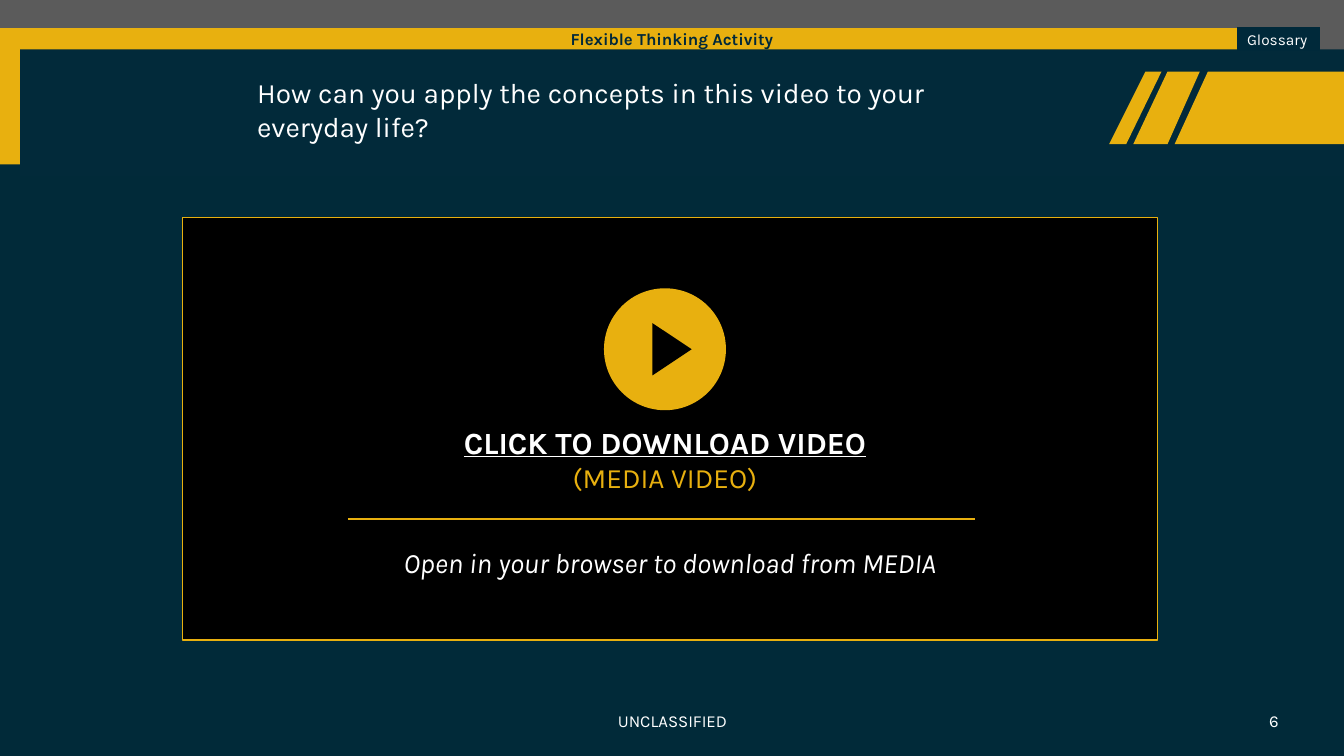
from dataclasses import dataclass

from lxml import etree
from pptx import Presentation
from pptx.dml.color import RGBColor
from pptx.enum.shapes import MSO_CONNECTOR, MSO_SHAPE
from pptx.enum.text import MSO_ANCHOR, PP_ALIGN
from pptx.oxml.ns import qn
from pptx.util import Inches, Pt

RECT, OVAL = MSO_SHAPE.RECTANGLE, MSO_SHAPE.OVAL
BUTTON = MSO_SHAPE.ACTION_BUTTON_CUSTOM
STRAIGHT = MSO_CONNECTOR.STRAIGHT
LEFT, CENTER, RIGHT = PP_ALIGN.LEFT, PP_ALIGN.CENTER, PP_ALIGN.RIGHT
TOP, MIDDLE = MSO_ANCHOR.TOP, MSO_ANCHOR.MIDDLE
W, H = 13.33, 7.5


@dataclass(frozen=True)
class Theme:
    font: str = "Karla"
    ground: str = "012A39"
    panel: str = "022A3A"
    navy: str = "00283A"
    button: str = "00293A"
    gray: str = "5B5B5B"
    gold: str = "E8B00F"
    white: str = "FFFFFF"
    black: str = "000000"
    tiny: int = 11
    small: int = 12
    body: int = 20
    action: int = 22


T = Theme()


def rgb(color):
    return RGBColor.from_string(color)


def paint(sp, fill, line=None):
    sp.shadow.inherit = False
    sp.fill.solid()
    sp.fill.fore_color.rgb = rgb(fill)
    if line:
        sp.line.color.rgb = rgb(line)
        sp.line.width = Pt(1)
    else:
        sp.line.fill.background()
    return sp


def add_box(shapes, kind, box, fill, line=None):
    return paint(shapes.add_shape(kind, *map(Inches, box)), fill, line)


def add_polygon(shapes, points, fill):
    pts = [(Inches(x), Inches(y)) for x, y in points]
    builder = shapes.build_freeform(*pts[0], scale=1.0)
    builder.add_line_segments(pts[1:], close=True)
    return paint(builder.convert_to_shape(), fill)


def set_frame(tf, anchor=TOP):
    tf.word_wrap = True
    tf.vertical_anchor = anchor
    tf.margin_left = tf.margin_right = Inches(0.1)
    tf.margin_top = tf.margin_bottom = Inches(0.05)


def add_run(p, text, size, color, bold=False, italic=False, underline=False):
    r = p.add_run()
    r.text = text
    r.font.name, r.font.size = T.font, Pt(size)
    r.font.color.rgb = rgb(color)
    r.font.bold, r.font.italic, r.font.underline = bold, italic, underline


def add_label(s, box, align, anchor, *lines):
    """Text box with one paragraph per (text, size, color, style) line."""
    tf = s.shapes.add_textbox(*map(Inches, box)).text_frame
    set_frame(tf, anchor)
    for i, (text, size, color, style) in enumerate(lines):
        p = tf.add_paragraph() if i else tf.paragraphs[0]
        p.alignment = align
        add_run(p, text, size, color, **style)


def place(sp, box):
    """Move a placeholder into the box, in front of the shapes so far."""
    sp.left, sp.top, sp.width, sp.height = map(Inches, box)
    sp.element.getparent().append(sp.element)
    return sp.text_frame


def header_bands(s, x, y, w):
    # Gray strip, gold frame and dark panel
    add_box(s.shapes, RECT, (x, y, w, 1.35), T.gray)
    add_box(s.shapes, RECT, (x, y + 0.28, w - 0.25, 1.35), T.gold)
    add_box(s.shapes, RECT, (x + 0.2, y + 0.49, w - 0.2, 1.26), T.panel)

    # Slanted stripes: top left, top right, bottom right, bottom left
    top, bottom = y + 0.71, y + 1.43
    for tl, tr, br, bl in ((11.98, W, W, 11.65),
                           (11.58, 11.9, 11.58, 11.24),
                           (11.36, 11.52, 11.17, 11)):
        add_polygon(s.shapes, [(x + tl, top), (x + tr, top),
                               (x + br, bottom), (x + bl, bottom)], T.gold)

    # Glossary button
    sp = add_box(s.shapes, BUTTON, (x + 12.27, y + 0.27, 0.82, 0.24), T.button)
    tf = sp.text_frame
    set_frame(tf, MIDDLE)
    tf.margin_right = tf.margin_top = tf.margin_bottom = 0
    p = tf.paragraphs[0]
    p.alignment = LEFT
    add_run(p, "Glossary", T.tiny, T.white)


def header_text(s, x, y, w):
    tf = place(s.shapes.title, (x, y + 0.28, w, 0.24))
    set_frame(tf, MIDDLE)
    tf.margin_top = tf.margin_bottom = 0
    p = tf.paragraphs[0]
    p.alignment, p.line_spacing, p.space_before = CENTER, 0.9, Pt(0)
    add_run(p, "Flexible Thinking Activity", T.small, T.navy, bold=True)

    # Question, without a bullet
    tf = place(s.placeholders[1], (x + 2.45, y + 0.7, 8.31, 0.77))
    set_frame(tf)
    p = tf.paragraphs[0]
    p.alignment, p.space_before = LEFT, Pt(0)
    pPr = p._p.get_or_add_pPr()
    pPr.set("marL", "0")
    pPr.set("indent", "0")
    etree.SubElement(pPr, qn("a:buNone"))
    add_run(p, "How can you apply the concepts in this video to your",
            T.body, T.white)
    p.add_line_break()
    add_run(p, "everyday life?", T.body, T.white)


def video_panel(s, x, y, w, h):
    add_box(s.shapes, RECT, (x, y, w, h), T.black, T.gold)

    # Play icon
    d = 1.21
    ix, iy = x + 4.18, y + 0.7
    icon = s.shapes.add_group_shape().shapes
    add_box(icon, OVAL, (ix, iy, d, d), T.gold)
    mid = iy + d / 2
    add_polygon(icon, [(ix + 0.87, mid), (ix + 0.48, mid - 0.26),
                       (ix + 0.48, mid + 0.26)], T.black)

    # Download prompt, rule and hint
    add_label(s, (x + 0.63, y + 1.99, 8.31, 0.77), CENTER, TOP,
              ("CLICK TO DOWNLOAD VIDEO", T.action, T.white,
               {"bold": True, "underline": True}),
              ("(MEDIA VIDEO)", T.body, T.gold, {}))
    rule_y = Inches(y + 2.99)
    rule = s.shapes.add_connector(STRAIGHT, Inches(x + 1.64), rule_y,
                                  Inches(x + 7.86), rule_y)
    rule.line.color.rgb = rgb(T.gold)
    rule.line.width = Pt(1.5)
    etree.SubElement(rule.element.spPr, qn("a:effectLst"))
    add_label(s, (x, y + 3.2, w, 0.77), CENTER, TOP,
              ("Open in your browser to download from MEDIA", T.body, T.white,
               {"italic": True}))


def footer(s, y, h):
    add_label(s, (4.42, y, 4.5, h), CENTER, MIDDLE,
              ("UNCLASSIFIED", T.small, T.white, {}))
    add_label(s, (10.01, y, 2.77, h), RIGHT, MIDDLE,
              ("6", T.small, T.white, {}))


def main():
    prs = Presentation()
    prs.slide_width, prs.slide_height = Inches(W), Inches(H)
    s = prs.slides.add_slide(prs.slide_layouts[1])
    s.background.fill.solid()
    s.background.fill.fore_color.rgb = rgb(T.ground)
    header_bands(s, 0, 0, W)
    header_text(s, 0, 0, W)
    video_panel(s, 1.81, 2.16, 9.67, 4.19)
    footer(s, 6.95, 0.4)
    prs.save("out.pptx")


if __name__ == "__main__":
    main()
